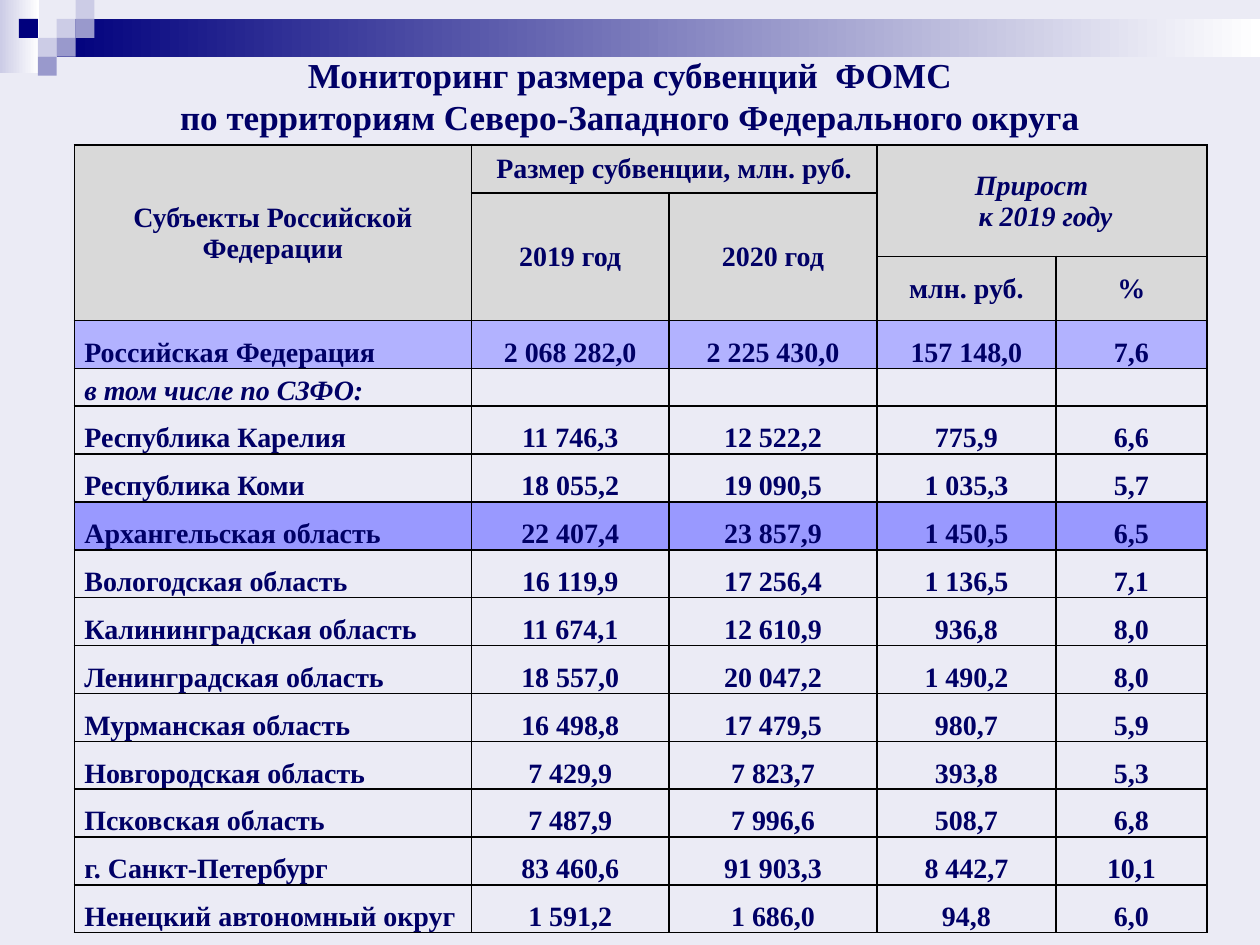
from lxml import etree
from pptx import Presentation
from pptx.dml.color import RGBColor
from pptx.enum.shapes import MSO_SHAPE
from pptx.enum.text import MSO_ANCHOR, PP_ALIGN
from pptx.oxml.ns import qn
from pptx.util import Inches, Pt

RECTANGLE = MSO_SHAPE.RECTANGLE
LEFT, CENTER = PP_ALIGN.LEFT, PP_ALIGN.CENTER
MIDDLE, BOTTOM = MSO_ANCHOR.MIDDLE, MSO_ANCHOR.BOTTOM

# Content
TITLE = "Мониторинг размера субвенций  ФОМС\vпо территориям Северо-Западного Федерального округа"
HEADERS = [  # row, column, last row, last column, text
    (0, 0, 2, 0, "Субъекты Российской Федерации"),
    (0, 1, 0, 2, "Размер субвенции, млн. руб."),
    (0, 3, 1, 4, "Прирост   \v к 2019 году"),
    (1, 1, 2, 1, "2019 год"),
    (1, 2, 2, 2, "2020 год"),
    (2, 3, 2, 3, "млн. руб."),
    (2, 4, 2, 4, "%"),
]
REGIONS = [
    ("Российская Федерация", "2 068 282,0", "2 225 430,0", "157 148,0", "7,6"),
    ("в том числе по СЗФО:", "", "", "", ""),
    ("Республика Карелия", "11 746,3", "12 522,2", "775,9", "6,6"),
    ("Республика Коми", "18 055,2", "19 090,5", "1 035,3", "5,7"),
    ("Архангельская область", "22 407,4", "23 857,9", "1 450,5", "6,5"),
    ("Вологодская область", "16 119,9", "17 256,4", "1 136,5", "7,1"),
    ("Калининградская область", "11 674,1", "12 610,9", "936,8", "8,0"),
    ("Ленинградская область", "18 557,0", "20 047,2", "1 490,2", "8,0"),
    ("Мурманская область", "16 498,8", "17 479,5", "980,7", "5,9"),
    ("Новгородская область", "7 429,9", "7 823,7", "393,8", "5,3"),
    ("Псковская область", "7 487,9", "7 996,6", "508,7", "6,8"),
    ("г. Санкт-Петербург", "83 460,6", "91 903,3", "8 442,7", "10,1"),
    ("Ненецкий автономный округ", "1 591,2", "1 686,0", "94,8", "6,0"),
]
ITALIC_TEXTS = {HEADERS[2][-1], REGIONS[1][0]}
ROW_FILLS = {"Российская Федерация": "B2B2FF", "Архангельская область": "9999FF"}

# Layout and style
FONT, TEXT_COLOR, HEADER_FILL = "Times New Roman", "000066", "D9D9D9"
COLUMN_WIDTHS = [3.15, 1.57, 1.65, 1.42, 1.2]
HEADER_HEIGHTS = [0.38, 0.5, 0.51]
ROW_HEIGHT, SUBHEADING_HEIGHT = 0.38, 0.3
NAVY, LILAC, VIOLET, WHITE = "00007D", "CCCCE6", "9999CC", "FFFFFF"
GRADIENT_BARS = [(0, 0, 0.31, 0.58, LILAC), (0.45, 0.15, 9.55, 0.3, NAVY)]
SQUARE = 0.15
SQUARES = [  # column and row on the square grid
    (3, 1, LILAC), (4, 0, LILAC), (4, 1, VIOLET), (2, 2, LILAC),
    (1, 1, NAVY), (3, 2, VIOLET), (2, 3, VIOLET),
]


def color(value):
    return RGBColor.from_string(value)


def format_text(text_frame, size, alignment, italic=False):
    for paragraph in text_frame.paragraphs:
        paragraph.alignment = alignment
        for run in paragraph.runs:
            font = run.font
            font.name, font.size = FONT, Pt(size)
            font.bold, font.italic = True, italic
            font.color.rgb = color(TEXT_COLOR)


def add_rectangle(slide, left, top, width, height):
    shape = slide.shapes.add_shape(
        RECTANGLE, Inches(left), Inches(top), Inches(width), Inches(height))
    shape.shadow.inherit = False
    shape.line.fill.background()
    return shape


def set_borders(cell):
    properties = cell._tc.get_or_add_tcPr()
    for index, side in enumerate(("lnL", "lnR", "lnT", "lnB")):
        line = etree.Element(qn(f"a:{side}"), w=str(Pt(1)))
        fill = etree.SubElement(line, qn("a:solidFill"))
        etree.SubElement(fill, qn("a:srgbClr"), val="000000")
        properties.insert(index, line)


def fill_cell(cell, text, alignment, anchor, side_margin):
    cell.vertical_anchor = anchor
    cell.margin_left = cell.margin_right = Inches(side_margin)
    cell.margin_top, cell.margin_bottom = Inches(0.01), 0
    if text:
        cell.text_frame.text = text
        format_text(cell.text_frame, 16, alignment, text in ITALIC_TEXTS)
    else:
        paragraph = cell.text_frame.paragraphs[0]
        etree.SubElement(paragraph._p, qn("a:endParaRPr"), sz="1600")


def add_decoration(slide):
    for *box, start in GRADIENT_BARS:
        fill = add_rectangle(slide, *box).fill
        fill.gradient()
        fill.gradient_angle = 0
        for stop, value in zip(fill.gradient_stops, (start, WHITE)):
            stop.color.rgb = color(value)
    for column, row, value in SQUARES:
        shape = add_rectangle(slide, column * SQUARE, row * SQUARE, SQUARE, SQUARE)
        shape.fill.solid()
        shape.fill.fore_color.rgb = color(value)


def add_title(slide):
    title = slide.shapes.title
    title.left, title.top = Inches(0.5), Inches(0.36)
    title.width, title.height = Inches(9), Inches(0.79)
    title.text_frame.text = TITLE
    title.text_frame.vertical_anchor = MIDDLE
    format_text(title.text_frame, 20, CENTER)


def add_subsidy_table(slide):
    heights = HEADER_HEIGHTS + [
        ROW_HEIGHT if region[1] else SUBHEADING_HEIGHT for region in REGIONS]
    table = slide.shapes.add_table(
        len(heights), len(COLUMN_WIDTHS), Inches(0.59), Inches(1.15),
        Inches(sum(COLUMN_WIDTHS)), Inches(sum(heights))).table
    table.first_row = table.horz_banding = False
    for column, width in zip(table.columns, COLUMN_WIDTHS):
        column.width = Inches(width)
    for row, height in zip(table.rows, heights):
        row.height = Inches(height)

    # Text
    for top, left, bottom, right, text in HEADERS:
        cell = table.cell(top, left)
        if (top, left) != (bottom, right):
            cell.merge(table.cell(bottom, right))
        fill_cell(cell, text, CENTER, MIDDLE, 0.01)
    for row, region in enumerate(REGIONS, len(HEADER_HEIGHTS)):
        for column, text in enumerate(region):
            alignment, margin = (CENTER, 0.01) if column else (LEFT, 0.08)
            fill_cell(table.cell(row, column), text, alignment, BOTTOM, margin)

    # Fills and borders
    fills = [HEADER_FILL] * len(HEADER_HEIGHTS) + [
        ROW_FILLS.get(region[0]) for region in REGIONS]
    for row, value in zip(table.rows, fills):
        for cell in row.cells:
            if value:
                cell.fill.solid()
                cell.fill.fore_color.rgb = color(value)
            else:
                cell.fill.background()
            set_borders(cell)


def main():
    presentation = Presentation()
    presentation.slide_width, presentation.slide_height = Inches(10), Inches(7.5)
    slide = presentation.slides.add_slide(presentation.slide_layouts[5])
    slide.background.fill.solid()
    slide.background.fill.fore_color.rgb = color("EBEBF5")
    add_decoration(slide)
    add_title(slide)
    add_subsidy_table(slide)
    presentation.save("out.pptx")


if __name__ == "__main__":
    main()
